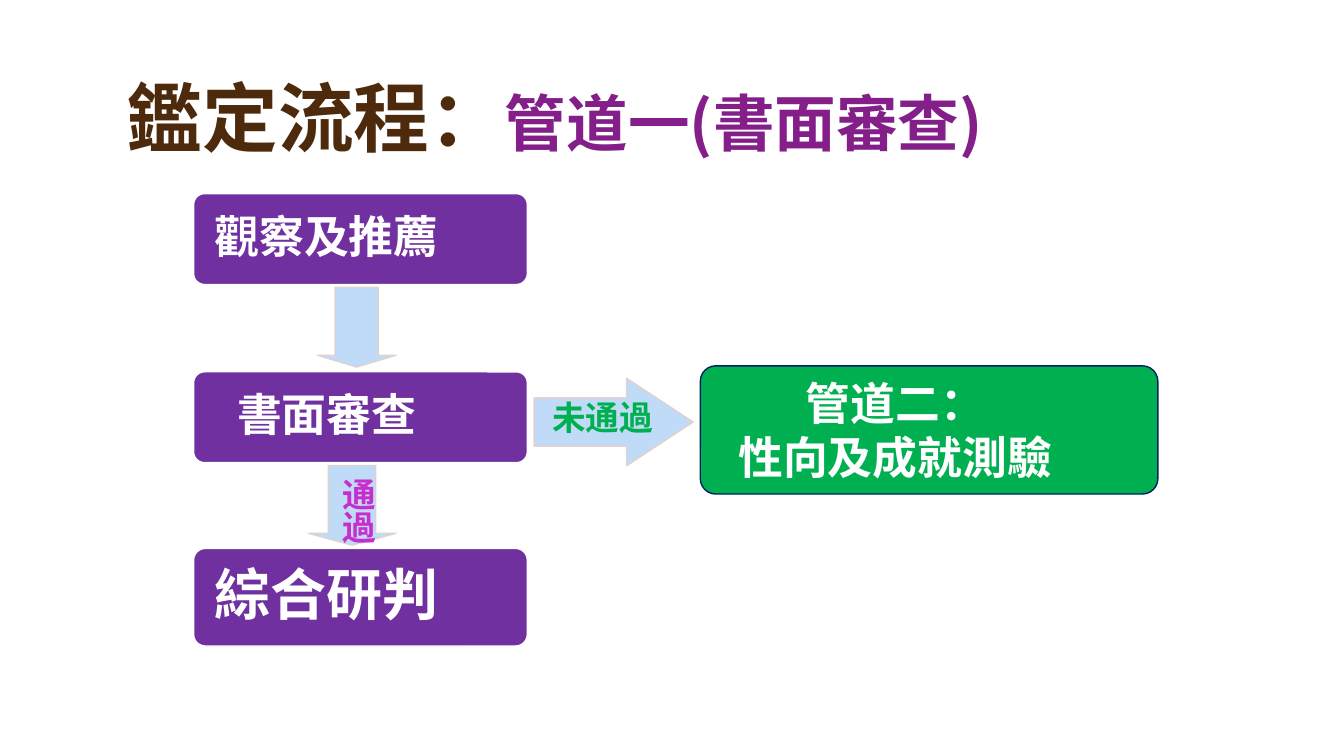
from lxml import etree
from pptx import Presentation
from pptx import util as u
from pptx.dml.color import RGBColor
from pptx.enum import shapes, text
from pptx.oxml import ns

FONT = "Noto Sans CJK SC"
HUES = {
    "violet": "7030A0", "green": "00B050", "navy": "002060", "white": "FFFFFF",
    "sky": "B9D8F7", "sand": "DED1CC", "rose": "E6CFCC",
    "pink": "C62ECD", "brown": "4D2A0B", "plum": "841E89",
}
KIND = shapes.MSO_SHAPE
MID, LOW, TOP = (text.MSO_ANCHOR.MIDDLE, text.MSO_ANCHOR.BOTTOM, text.MSO_ANCHOR.TOP)

STEPS = [
    ((4.88, 9.37, 8.41, 2.29), "violet", "white", ["書面審查"], 32, 0.9),
    ((4.88, 13.82, 8.41, 2.46), "violet", "white", ["綜合研判"], 40, 0.9),
    ((17.65, 9.22, 11.53, 3.23), "green", "navy", ["管道二：", "性向及成就測驗"], 32, 1.0),
    ((4.88, 4.88, 8.41, 2.29), "violet", "white", ["觀察及推薦"], 32, 0.9),
]
ARROWS = [
    (KIND.DOWN_ARROW, (8, 7.24, 1.98, 2.01), (0.55, 0.15), "sand"),
    (KIND.DOWN_ARROW, (7.77, 11.73, 2.21, 2.01), (0.54, 0.15), "sand"),
    (KIND.RIGHT_ARROW, (13.46, 9.53, 4.01, 2.21), (0.55, 0.76), "rose"),
]
LABELS = [
    ((8.1, 11.79, 1.55, 2.92), [("通過", 24, "pink")], TOP, 1.0, "eaVert"),
    ((13.67, 9.88, 3.35, 1.27), [("未通過", 24, "green")], TOP, 1.0, "horz"),
    ((2.95, 0.84, 28.96, 3.38),
     [("鑑定流程：", 54, "brown"), ("管道一(書面審查)", 44, "plum")], LOW, 0.9, "horz"),
]


def place(box):
    return [u.Cm(v) for v in box]


def style(obj, vals):
    for key, val in vals.items():
        setattr(obj, key, val)


def write(para, words, size, hue):
    run = para.add_run()
    run.text = words
    style(run.font, {"size": u.Pt(size), "bold": True, "name": FONT})
    run.font.color.rgb = RGBColor.from_string(HUES[hue])
    face = etree.SubElement(run.font._element, ns.qn("a:ea"))
    face.set("typeface", FONT)


def draw(page, kind, box, fill, edge, ratios):
    shape = page.shapes.add_shape(kind, *place(box))
    shape.shadow.inherit = False
    shape.fill.solid()
    shape.fill.fore_color.rgb = RGBColor.from_string(HUES[fill])
    shape.line.color.rgb = RGBColor.from_string(HUES[edge])
    shape.line.width = u.Pt(1)
    for i, ratio in enumerate(ratios):
        shape.adjustments[i] = ratio
    return shape


def add_step(page, box, fill, edge, lines, size, space):
    frame = draw(page, KIND.ROUNDED_RECTANGLE, box, fill, edge, [0.12]).text_frame
    pad = u.Cm(0.38)
    style(frame, {"word_wrap": True, "vertical_anchor": MID, "margin_left": pad,
                  "margin_top": pad, "margin_right": u.Cm(2.08), "margin_bottom": pad})
    for i, line in enumerate(lines):
        para = frame.add_paragraph() if i else frame.paragraphs[0]
        style(para, {"alignment": text.PP_ALIGN.CENTER, "line_spacing": space})
        write(para, line, size, "white")


def add_arrow(page, kind, box, ratios, edge):
    shape = draw(page, kind, box, "sky", edge, ratios)
    for hue in shape._element.spPr.iter(ns.qn("a:srgbClr")):
        etree.SubElement(hue, ns.qn("a:alpha")).set("val", "90000")


def add_label(page, box, runs, anchor, space, flow):
    frame = page.shapes.add_textbox(*place(box)).text_frame
    style(frame, {"word_wrap": True, "vertical_anchor": anchor})
    frame._txBody.bodyPr.set("vert", flow)
    para = frame.paragraphs[0]
    para.line_spacing = space
    for run in runs:
        write(para, *run)


def main():
    deck = Presentation()
    style(deck, {"slide_width": u.Cm(33.87), "slide_height": u.Cm(19.05)})
    page = deck.slides.add_slide(deck.slide_layouts[6])
    for add, rows in ((add_step, STEPS), (add_arrow, ARROWS), (add_label, LABELS)):
        for row in rows:
            add(page, *row)
    deck.save("out.pptx")


if __name__ == "__main__":
    main()
